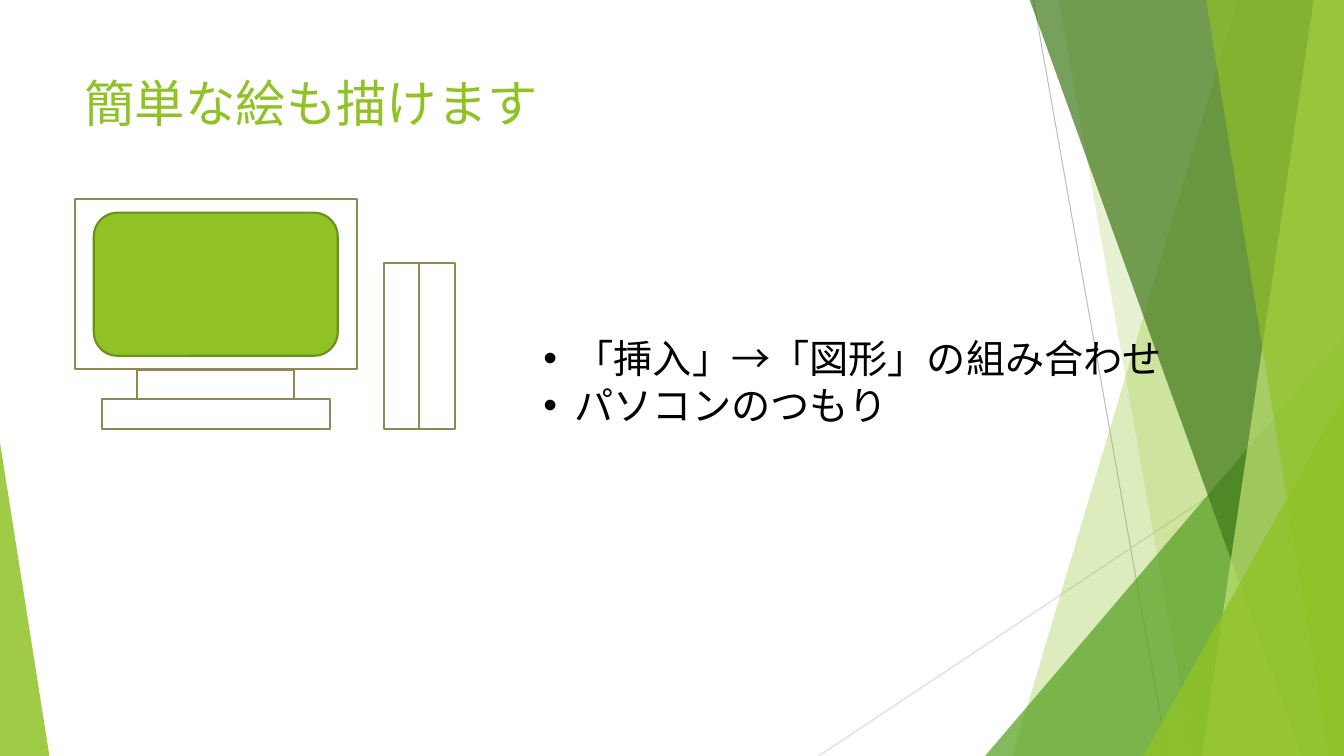
from dataclasses import dataclass

from lxml.etree import SubElement
from pptx import Presentation
from pptx.dml.color import RGBColor
from pptx.enum.shapes import MSO_CONNECTOR as Connector, MSO_SHAPE as Preset
from pptx.enum.text import MSO_ANCHOR as Anchor, MSO_AUTO_SIZE as AutoSize
from pptx.oxml.ns import qn
from pptx.util import Inches, Pt


@dataclass(frozen=True)
class Theme:
    font: str = "Cabin"
    title_size: int = 36
    body_size: int = 28
    green: str = "90C226"
    leaf: str = "54A021"
    forest: str = "3F7819"
    lime: str = "C0E474"
    screen_edge: str = "6B901C"
    case_edge: str = "918655"
    gray: str = "BFBFBF"
    light_gray: str = "D9D9D9"
    white: str = "FFFFFF"
    black: str = "000000"
    hairline: float = 0.75
    outline: float = 1.5


WIDTH, HEIGHT = 13.33, 7.5
BLEED = -0.01
BULLET_INDENT = 0.31


def set_text(frame, *lines, font, size, color, bullet=None):
    for number, line in enumerate(lines):
        paragraph = frame.add_paragraph() if number else frame.paragraphs[0]
        run = paragraph.add_run()
        run.text = line
        run.font.name = font
        run.font.size = Pt(size)
        run.font.color.rgb = RGBColor.from_string(color)
        if bullet:
            props = paragraph._p.get_or_add_pPr()
            props.set("marL", str(Inches(BULLET_INDENT)))
            props.set("indent", str(-Inches(BULLET_INDENT)))
            SubElement(props, qn("a:buFont")).set("typeface", "Arial")
            SubElement(props, qn("a:buChar")).set("char", bullet)


class SlideBuilder:
    def __init__(self, slide, theme):
        self.shapes = slide.shapes
        self.theme = theme

    def paint(self, shape, fill=None, alpha=100, edge=None):
        """Set fill, opacity in percent and outline, and drop the shadow."""
        shape.shadow.inherit = False
        if fill:
            shape.fill.solid()
            shape.fill.fore_color.rgb = RGBColor.from_string(fill)
            if alpha < 100:
                color = shape.fill._xPr.find(qn("a:solidFill"))[0]
                SubElement(color, qn("a:alpha")).set("val", str(alpha * 1000))
        else:
            shape.fill.background()
        if edge:
            shape.line.color.rgb = RGBColor.from_string(edge)
            shape.line.width = Pt(self.theme.outline)
        else:
            shape.line.fill.background()

    def preset(self, kind, left, top, width, height, adjust=None, **style):
        shape = self.shapes.add_shape(
            kind, Inches(left), Inches(top), Inches(width), Inches(height))
        if adjust is not None:
            shape.adjustments[0] = adjust
        self.paint(shape, **style)

    def ribbon(self, top_left, bottom_left, **style):
        """Draw a full-height band from a slanted left side to the slide's right edge."""
        corners = [(top_left, BLEED), (WIDTH, BLEED), (WIDTH, HEIGHT), (bottom_left, HEIGHT)]
        (start, *rest) = [(Inches(x), Inches(y)) for x, y in corners]
        outline = self.shapes.build_freeform(*start)
        outline.add_line_segments(rest, close=True)
        self.paint(outline.convert_to_shape(), **style)

    def line(self, start, end, color):
        line = self.shapes.add_connector(
            Connector.STRAIGHT, *(Inches(value) for value in (*start, *end)))
        line.line.color.rgb = RGBColor.from_string(color)
        line.line.width = Pt(self.theme.hairline)
        SubElement(line._element.spPr, qn("a:effectLst"))

    def text(self, left, top, width, height, *lines, wrap=True, grow=False, **style):
        box = self.shapes.add_textbox(
            Inches(left), Inches(top), Inches(width), Inches(height))
        frame = box.text_frame
        frame.word_wrap = wrap
        frame.vertical_anchor = Anchor.TOP
        frame.auto_size = AutoSize.SHAPE_TO_FIT_TEXT if grow else AutoSize.NONE
        set_text(frame, *lines, font=self.theme.font, **style)


def draw_backdrop(builder):
    theme = builder.theme
    builder.line((10.25, 0), (11.58, HEIGHT), theme.gray)
    builder.line((WIDTH, 4.03), (8.12, HEIGHT), theme.light_gray)
    builder.ribbon(12.28, 10.04, fill=theme.green, alpha=30)
    builder.ribbon(10.5, 11.83, fill=theme.green, alpha=20)
    builder.preset(Preset.ISOSCELES_TRIANGLE, 9.77, 3.33, 3.56, 4.17,
                   adjust=1, fill=theme.leaf, alpha=72)
    for top_left, bottom_left, fill, alpha in (
        (10.21, 12.91, theme.forest, 70),
        (13.03, 11.92, theme.lime, 70),
        (11.96, 13.18, theme.green, 65),
    ):
        builder.ribbon(top_left, bottom_left, fill=fill, alpha=alpha)
    for left, top, width, height, apex, alpha in (
        (11.34, 3.93, 1.99, 3.57, 1, 80),
        (0, 4.39, 0.49, 3.11, 0, 85),
    ):
        builder.preset(Preset.ISOSCELES_TRIANGLE, left, top, width, height,
                       adjust=apex, fill=theme.green, alpha=alpha)


def draw_computer(builder):
    theme = builder.theme
    builder.preset(Preset.ROUNDED_RECTANGLE, 0.93, 2.11, 2.42, 1.42,
                   fill=theme.green, edge=theme.screen_edge)
    monitor = (0.74, 1.97, 2.8, 1.69)
    neck = (1.36, 3.67, 1.56, 0.29)
    base = (1.01, 3.96, 2.26, 0.3)
    for part in (monitor, neck, base):
        builder.preset(Preset.RECTANGLE, *part, edge=theme.case_edge)
    tower_left, half_width = 3.81, 0.35
    for half in range(2):
        builder.preset(Preset.RECTANGLE, tower_left + half * half_width, 2.61,
                       half_width, 1.65, fill=theme.white, edge=theme.case_edge)


def main():
    deck = Presentation()
    deck.slide_width, deck.slide_height = Inches(WIDTH), Inches(HEIGHT)
    theme = Theme()
    builder = SlideBuilder(deck.slides.add_slide(deck.slide_layouts[6]), theme)
    draw_backdrop(builder)
    builder.text(0.74, 0.67, 9.4, 1.44, "簡単な絵も描けます",
                 size=theme.title_size, color=theme.green)
    draw_computer(builder)
    builder.text(5.29, 3.27, 6.41, 1.04, "「挿入」→「図形」の組み合わせ", "パソコンのつもり",
                 wrap=False, grow=True, size=theme.body_size, color=theme.black, bullet="•")
    deck.save("out.pptx")


if __name__ == "__main__":
    main()
